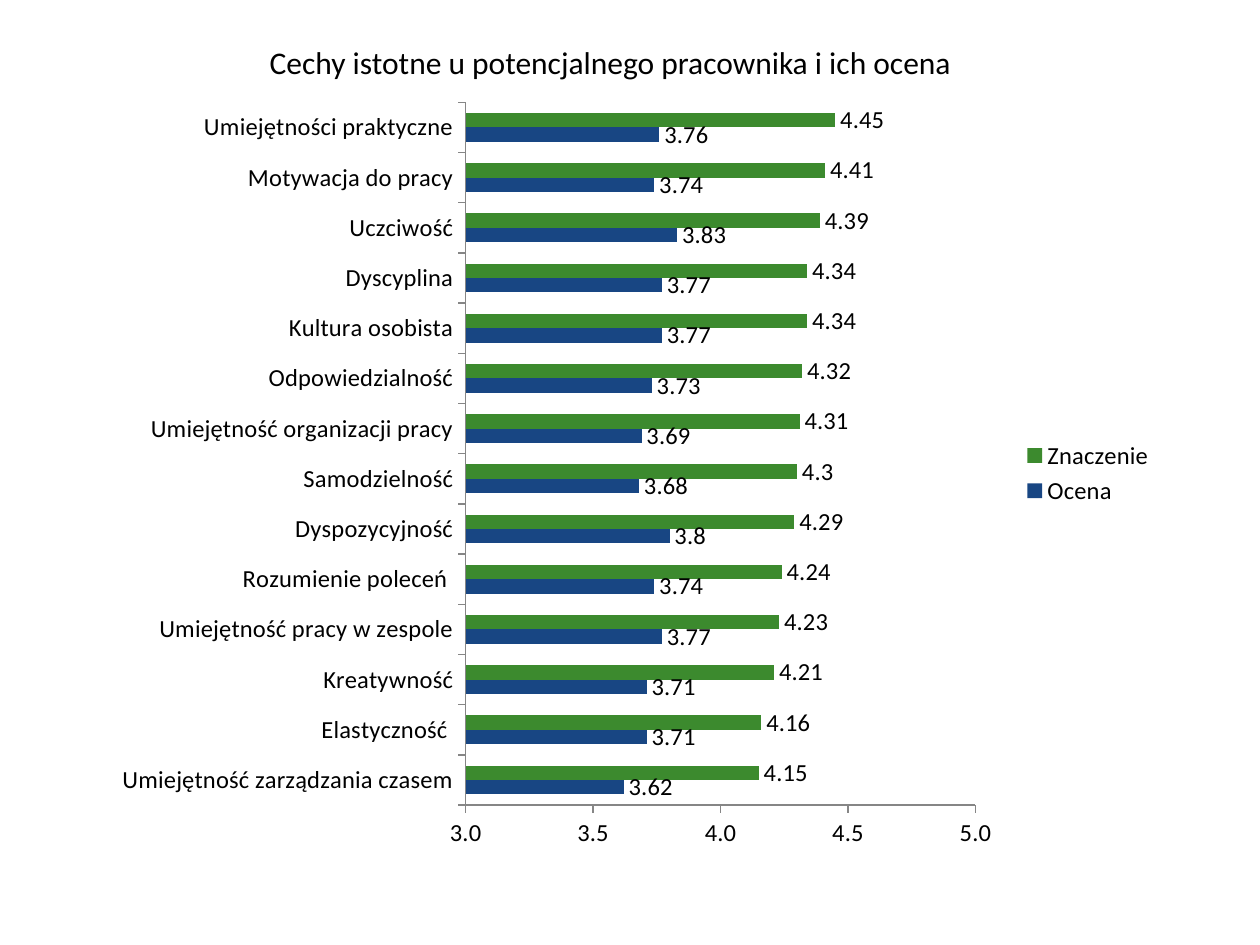
import pptx
import pptx.chart.data
import pptx.dml.color
import pptx.enum.chart
import pptx.enum.text
import pptx.oxml
import pptx.oxml.ns
import pptx.util
from pptx.util import Inches

TITLE = "Cechy istotne u potencjalnego pracownika i ich ocena"
FONT = "Calibri"
COLORS = {"text": "000000", "axis": "868686", "Ocena": "184683", "Znaczenie": "3C8A2E"}
SERIES = ("Ocena", "Znaczenie")
TRAITS = [  # trait, Ocena, Znaczenie; from the bottom bar up
    ("Umiejętność zarządzania czasem", 3.62, 4.15),
    ("Elastyczność ", 3.71, 4.16),
    ("Kreatywność", 3.71, 4.21),
    ("Umiejętność pracy w zespole", 3.77, 4.23),
    ("Rozumienie poleceń ", 3.74, 4.24),
    ("Dyspozycyjność", 3.8, 4.29),
    ("Samodzielność", 3.68, 4.3),
    ("Umiejętność organizacji pracy", 3.69, 4.31),
    ("Odpowiedzialność", 3.73, 4.32),
    ("Kultura osobista", 3.77, 4.34),
    ("Dyscyplina", 3.77, 4.34),
    ("Uczciwość", 3.83, 4.39),
    ("Motywacja do pracy", 3.74, 4.41),
    ("Umiejętności praktyczne", 3.76, 4.45),
]
PLOT_AREA = {"x": 0.34, "y": 0.02, "w": 0.48, "h": 0.91}  # shares of the chart


def color(name):
    return pptx.dml.color.RGBColor.from_string(COLORS[name])


def style_font(font, size):
    font.name = FONT
    font.size = pptx.util.Pt(size)
    font.color.rgb = color("text")


def place_plot_area(chart):
    """Fix the inner plot area, without axis labels, inside the chart."""
    plot_area = chart._chartSpace.chart.plotArea
    for layout in plot_area.findall(pptx.oxml.ns.qn("c:layout")):
        plot_area.remove(layout)
    modes = "".join(f'<c:{side}Mode val="edge"/>' for side in "xy")
    sizes = "".join(f'<c:{key} val="{share}"/>' for key, share in PLOT_AREA.items())
    plot_area.insert(0, pptx.oxml.parse_xml(
        f'<c:layout {pptx.oxml.ns.nsdecls("c")}><c:manualLayout>'
        f'<c:layoutTarget val="inner"/>{modes}{sizes}</c:manualLayout></c:layout>'))


def add_traits_chart(slide):
    data = pptx.chart.data.CategoryChartData()
    data.categories = [row[0] for row in TRAITS]
    for column, name in enumerate(SERIES, start=1):
        data.add_series(name, [row[column] for row in TRAITS])
    chart = slide.shapes.add_chart(
        pptx.enum.chart.XL_CHART_TYPE.BAR_CLUSTERED,
        Inches(0.83), Inches(0.69), Inches(8.43), Inches(6.13), data).chart
    style_font(chart.font, 14)
    chart.has_title = False
    chart.has_legend = True
    chart.legend.position = pptx.enum.chart.XL_LEGEND_POSITION.RIGHT
    chart.legend.include_in_layout = False
    place_plot_area(chart)

    plot = chart.plots[0]
    plot.gap_width = 150
    plot.vary_by_categories = False
    for series in plot.series:
        series.format.fill.solid()
        series.format.fill.fore_color.rgb = color(series.name)
        series.invert_if_negative = False
        labels = series.data_labels
        labels.show_value = True
        labels.position = pptx.enum.chart.XL_LABEL_POSITION.OUTSIDE_END

    for axis in (chart.category_axis, chart.value_axis):
        axis.has_major_gridlines = False
        axis.major_tick_mark = pptx.enum.chart.XL_TICK_MARK.OUTSIDE
        axis.minor_tick_mark = pptx.enum.chart.XL_TICK_MARK.NONE
        axis.format.line.color.rgb = color("axis")
        axis.format.line.width = pptx.util.Pt(0.75)
    scale = chart.value_axis
    scale.minimum_scale, scale.maximum_scale, scale.major_unit = 3, 5, 0.5
    scale.tick_labels.number_format = "#,##0.0"
    scale.tick_labels.number_format_is_linked = False


def add_title(slide):
    frame = slide.shapes.add_textbox(
        Inches(1.3), Inches(0.29), Inches(7.09), Inches(0.4)).text_frame
    frame.word_wrap = True
    frame.auto_size = pptx.enum.text.MSO_AUTO_SIZE.SHAPE_TO_FIT_TEXT
    paragraph = frame.paragraphs[0]
    paragraph.alignment = pptx.enum.text.PP_ALIGN.CENTER
    run = paragraph.add_run()
    run.text = TITLE
    style_font(run.font, 18)


def main():
    presentation = pptx.Presentation()
    presentation.slide_width, presentation.slide_height = Inches(10), Inches(7.5)
    slide = presentation.slides.add_slide(presentation.slide_layouts[6])
    add_traits_chart(slide)
    add_title(slide)
    presentation.save("out.pptx")


if __name__ == "__main__":
    main()
